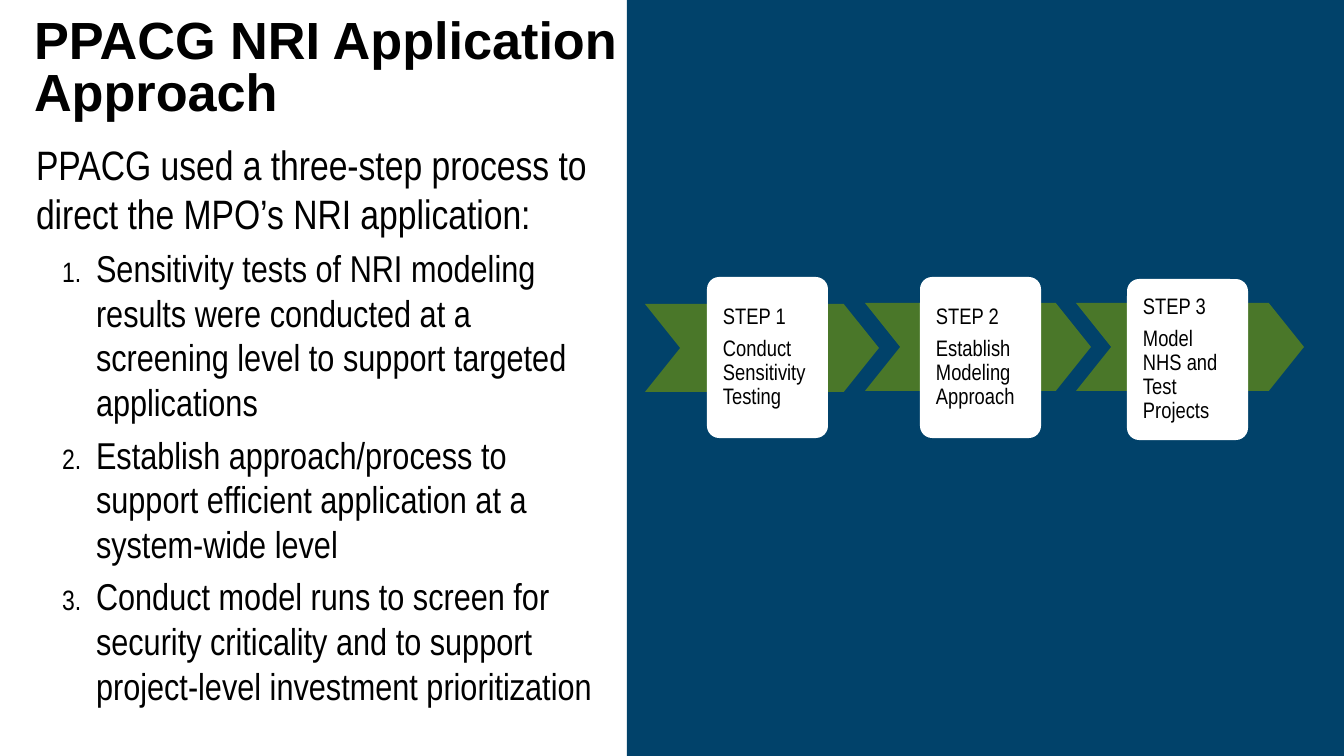
from lxml import etree
from pptx import Presentation
from pptx.dml.color import RGBColor
from pptx.enum.shapes import MSO_SHAPE
from pptx.enum.text import MSO_ANCHOR, MSO_AUTO_SIZE, PP_ALIGN
from pptx.oxml.ns import qn
from pptx.util import Emu, Pt

EMU_PER_PX = 914400 / 134.4
NAVY, GREEN, WHITE, BLACK = "01426A", "4A7729", "FFFFFF", "000000"

TITLE = "PPACG NRI Application Approach"
INTRO = "PPACG used a three-step process to direct the MPO’s NRI application:"
APPROACH = [
    "Sensitivity tests of NRI modeling results were conducted at a screening "
    "level to support targeted applications",
    "Establish approach/process to support efficient application at a "
    "system-wide level",
    "Conduct model runs to screen for security criticality and to support "
    "project-level investment prioritization",
]
# label, action, chevron (left, top, width), card (left, top), within the panel
STEPS = [
    ("STEP 1", "Conduct Sensitivity Testing", (18, 305, 234), (80, 278)),
    ("STEP 2", "Establish Modeling Approach", (238, 304, 226), (293, 278)),
    ("STEP 3", "Model NHS and Test Projects", (449, 304, 228), (500, 280)),
]
CHEVRON_HEIGHT = 88
CARD_WIDTH, CARD_HEIGHT, CARD_INSET = 121, 161, 4


def px(length):
    return Emu(round(length * EMU_PER_PX))


def color(hex_value):
    return RGBColor.from_string(hex_value)


def add_block(shapes, kind, box, fill, adjust=None):
    block = shapes.add_shape(kind, *map(px, box))
    block.shadow.inherit = False
    block.fill.solid()
    block.fill.fore_color.rgb = color(fill)
    block.line.fill.background()
    if adjust is not None:
        block.adjustments[0] = adjust
    return block


def set_frame(frame, margins, anchor):
    frame.word_wrap = True
    frame.auto_size = MSO_AUTO_SIZE.NONE
    frame.vertical_anchor = anchor
    frame.margin_left = frame.margin_right = px(margins[0])
    frame.margin_top = frame.margin_bottom = px(margins[1])


def write(frame, text, size, font="Arial Narrow", bold=False, line=None,
          before=0, after=0):
    """Fill the empty first paragraph, or add one below the others."""
    paragraph = frame.paragraphs[0]
    if paragraph.runs:
        paragraph = frame.add_paragraph()
    paragraph.alignment = PP_ALIGN.LEFT
    paragraph.space_before, paragraph.space_after = Pt(before), Pt(after)
    if line is not None:
        paragraph.line_spacing = line
    run = paragraph.add_run()
    run.text = text
    run.font.name, run.font.size, run.font.bold = font, Pt(size), bold
    run.font.color.rgb = color(BLACK)
    return paragraph


def number(paragraph, left, hanging):
    properties = paragraph._p.get_or_add_pPr()
    properties.set("lvl", "1")
    properties.set("marL", str(px(left)))
    properties.set("indent", str(-px(hanging)))
    etree.SubElement(properties, qn("a:buSzPct")).set("val", "75000")
    etree.SubElement(properties, qn("a:buFont")).set("typeface", "Arial")
    etree.SubElement(properties, qn("a:buAutoNum")).set("type", "arabicPeriod")


def place_title(title, box):
    title.left, title.top, title.width, title.height = map(px, box)
    set_frame(title.text_frame, (34, 7), MSO_ANCHOR.BOTTOM)
    write(title.text_frame, TITLE, 28, font="Arial", bold=True, line=Pt(28))


def add_approach(shapes, box):
    frame = shapes.add_textbox(*map(px, box)).text_frame
    set_frame(frame, (34, 7), MSO_ANCHOR.TOP)
    write(frame, INTRO, 22, before=4)
    for item in APPROACH:
        number(write(frame, item, 20, before=4), left=60, hanging=34)


def add_step(shapes, origin, label, action, chevron, card):
    left, top = origin
    chevron_left, chevron_top, chevron_width = chevron
    add_block(shapes, MSO_SHAPE.CHEVRON,
              (left + chevron_left, top + chevron_top, chevron_width, CHEVRON_HEIGHT),
              GREEN, 0.4)
    card_left, card_top = left + card[0], top + card[1]
    add_block(shapes, MSO_SHAPE.ROUNDED_RECTANGLE,
              (card_left, card_top, CARD_WIDTH, CARD_HEIGHT), WHITE, 0.1)
    text_box = (card_left + CARD_INSET, card_top + CARD_INSET,
                CARD_WIDTH - 2 * CARD_INSET, CARD_HEIGHT - 2 * CARD_INSET)
    frame = shapes.add_textbox(*map(px, text_box)).text_frame
    set_frame(frame, (12, 12), MSO_ANCHOR.MIDDLE)
    for text in (label, action):
        write(frame, text, 12, line=0.9, after=4)


def add_process_panel(shapes, box):
    add_block(shapes, MSO_SHAPE.RECTANGLE, box, NAVY)
    process = shapes.add_group_shape()
    for step in STEPS:
        add_step(process.shapes, box[:2], *step)


def main():
    deck = Presentation()
    deck.slide_width, deck.slide_height = px(1344), px(756)
    slide = deck.slides.add_slide(deck.slide_layouts[5])

    # Left column: title and numbered approach
    place_title(slide.shapes.title, (0, 1, 728, 128))
    add_approach(slide.shapes, (2, 132, 633, 206))

    # Right column: three-step process
    add_process_panel(slide.shapes, (627, -1, 717, 757))

    deck.save("out.pptx")


if __name__ == "__main__":
    main()
